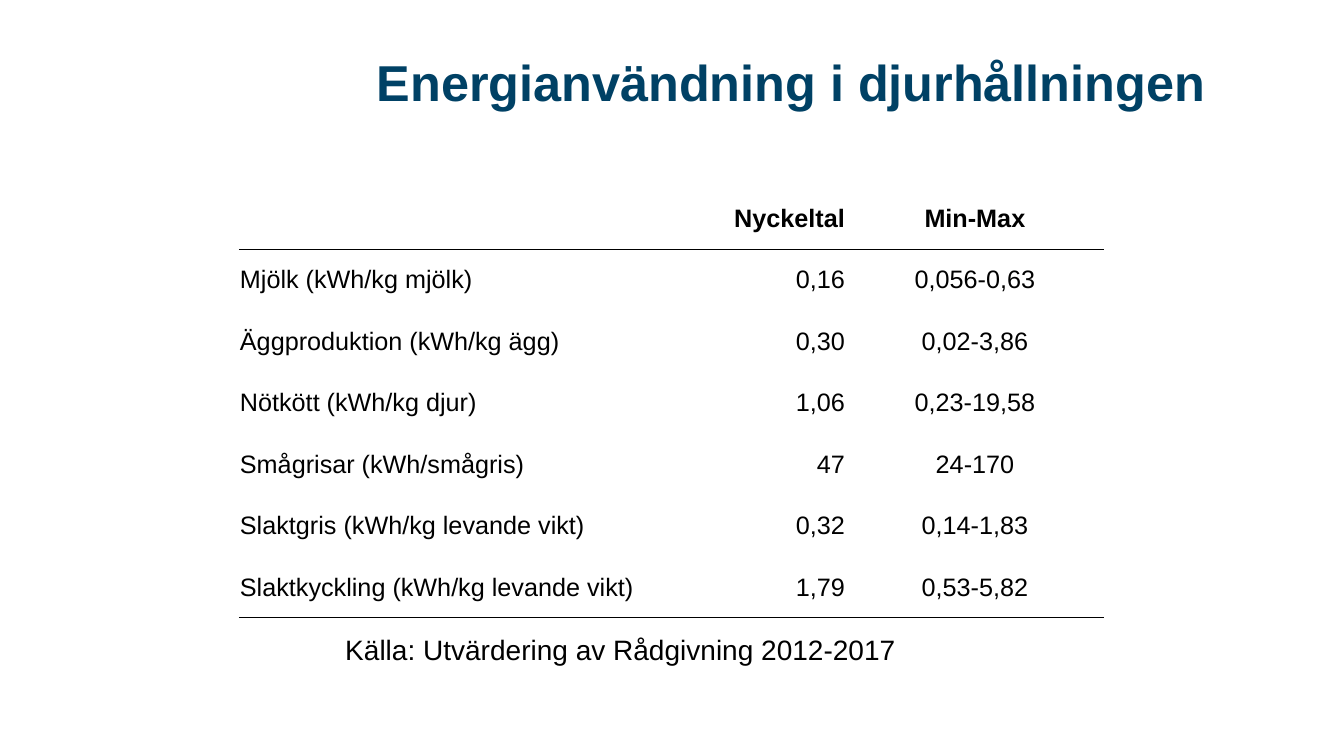
from lxml.etree import SubElement
from pptx import Presentation
from pptx.dml.color import RGBColor
from pptx.enum.text import MSO_ANCHOR, PP_ALIGN
from pptx.oxml import parse_xml
from pptx.oxml.ns import nsdecls, qn
from pptx.util import Inches, Pt

NAVY = RGBColor(0x00, 0x41, 0x65)
BLACK = RGBColor(0x00, 0x00, 0x00)
NO_STYLE = "{2D5ABB26-0587-4C30-8999-92F81FD0307C}"

COLUMN_WIDTHS = [4.68, 1.34, 2.56]
COLUMN_ALIGNMENTS = [PP_ALIGN.LEFT, PP_ALIGN.RIGHT, PP_ALIGN.CENTER]
ROW_HEIGHT = 0.61
ROWS = [
    ("", "Nyckeltal", "Min-Max"),
    ("Mjölk (kWh/kg mjölk)", "0,16", "0,056-0,63"),
    ("Äggproduktion (kWh/kg ägg)", "0,30", "0,02-3,86"),
    ("Nötkött (kWh/kg djur)", "1,06", "0,23-19,58"),
    ("Smågrisar (kWh/smågris)", "47", "24-170"),
    ("Slaktgris (kWh/kg levande vikt)", "0,32", "0,14-1,83"),
    ("Slaktkyckling (kWh/kg levande vikt)", "1,79", "0,53-5,82"),
]
RULED_ROWS = (0, len(ROWS) - 1)


def add_text(frame, text, size, color, alignment, bold=False):
    para = frame.paragraphs[0]
    para.alignment = alignment
    span = para.add_run()
    span.text = text
    span.font.name = "Arial"
    span.font.size = Pt(size)
    span.font.bold = bold
    span.font.color.rgb = color
    return para


def add_bottom_rule(cell):
    line = parse_xml(f'<a:lnB {nsdecls("a")} w="{Pt(0.5)}"/>')
    fill = SubElement(line, qn("a:solidFill"))
    SubElement(fill, qn("a:srgbClr"), val=str(BLACK))
    cell._tc.get_or_add_tcPr().insert(0, line)


deck = Presentation()
deck.slide_width = Inches(13.33)
deck.slide_height = Inches(7.5)
page = deck.slides.add_slide(deck.slide_layouts[6])

# Title
title_box = page.shapes.add_textbox(Inches(1.66), Inches(0.33), Inches(10.4), Inches(1.04))
title_box.text_frame.word_wrap = True
title_box.text_frame.vertical_anchor = MSO_ANCHOR.MIDDLE
title = add_text(title_box.text_frame, "Energianvändning i djurhållningen", 36, NAVY,
                 PP_ALIGN.RIGHT, bold=True)
title.line_spacing = 0.9

# Table of energy use
energy_frame = page.shapes.add_table(
    len(ROWS), len(COLUMN_WIDTHS), Inches(2.37), Inches(1.86),
    Inches(sum(COLUMN_WIDTHS)), Inches(ROW_HEIGHT * len(ROWS)))
energy_table = energy_frame.table
energy_table.first_row = False
energy_table.horz_banding = False
energy_table._tbl.tblPr.find(qn("a:tableStyleId")).text = NO_STYLE
for column, width in zip(energy_table.columns, COLUMN_WIDTHS):
    column.width = Inches(width)

for row_index, texts in enumerate(ROWS):
    energy_table.rows[row_index].height = Inches(ROW_HEIGHT)
    for column_index, text in enumerate(texts):
        cell = energy_table.cell(row_index, column_index)
        cell.fill.background()
        cell.vertical_anchor = MSO_ANCHOR.MIDDLE
        cell.margin_left = cell.margin_right = cell.margin_top = Inches(0.01)
        cell.margin_bottom = 0
        if text:
            add_text(cell.text_frame, text, 18, BLACK,
                     COLUMN_ALIGNMENTS[column_index], bold=row_index == 0)
        if row_index in RULED_ROWS:
            add_bottom_rule(cell)

# Source line
source_box = page.shapes.add_textbox(Inches(2.06), Inches(6.23), Inches(8.19), Inches(0.77))
source_box.text_frame.word_wrap = True
add_text(source_box.text_frame, "Källa: Utvärdering av Rådgivning 2012-2017", 20, BLACK,
         PP_ALIGN.CENTER)

deck.save("out.pptx")
